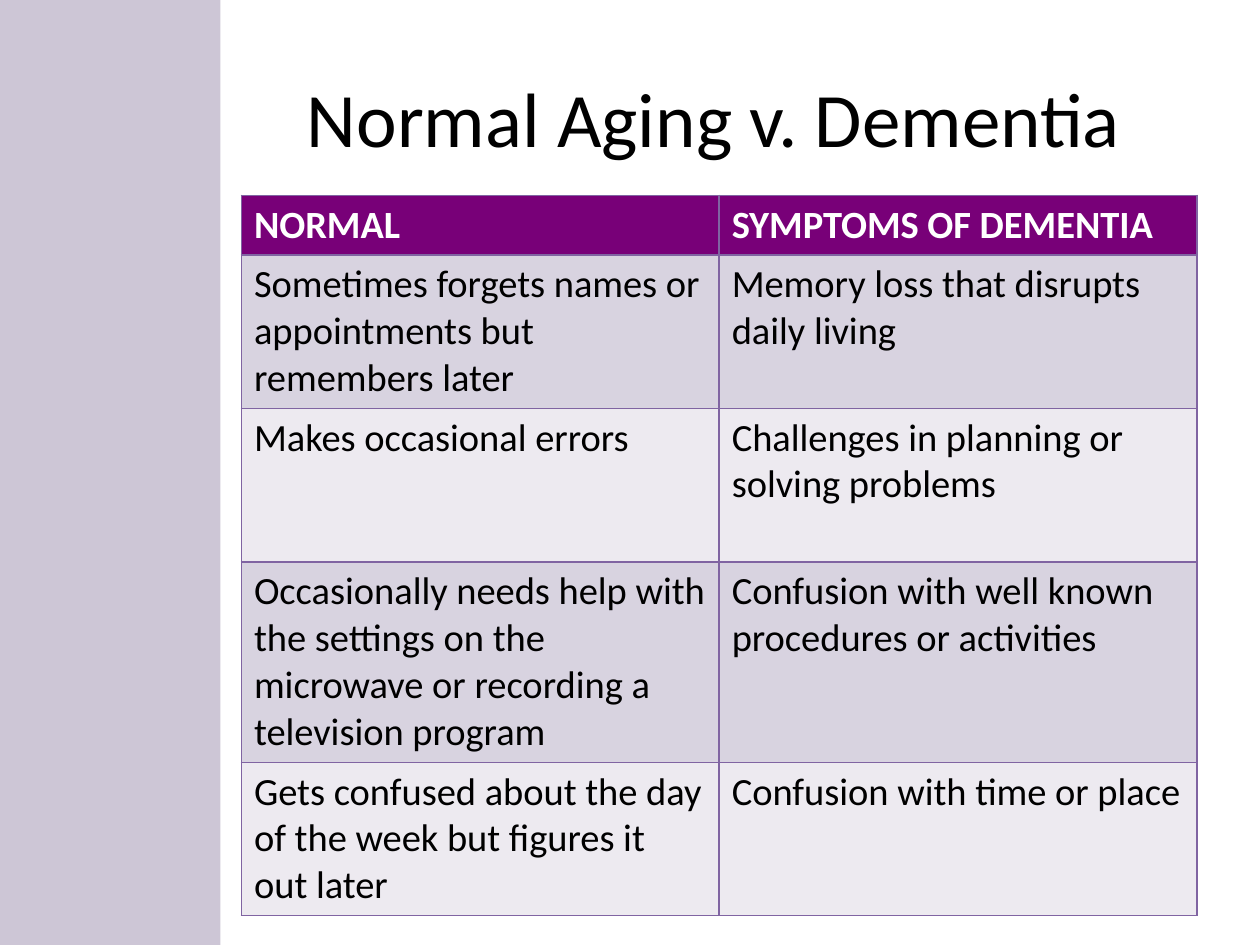
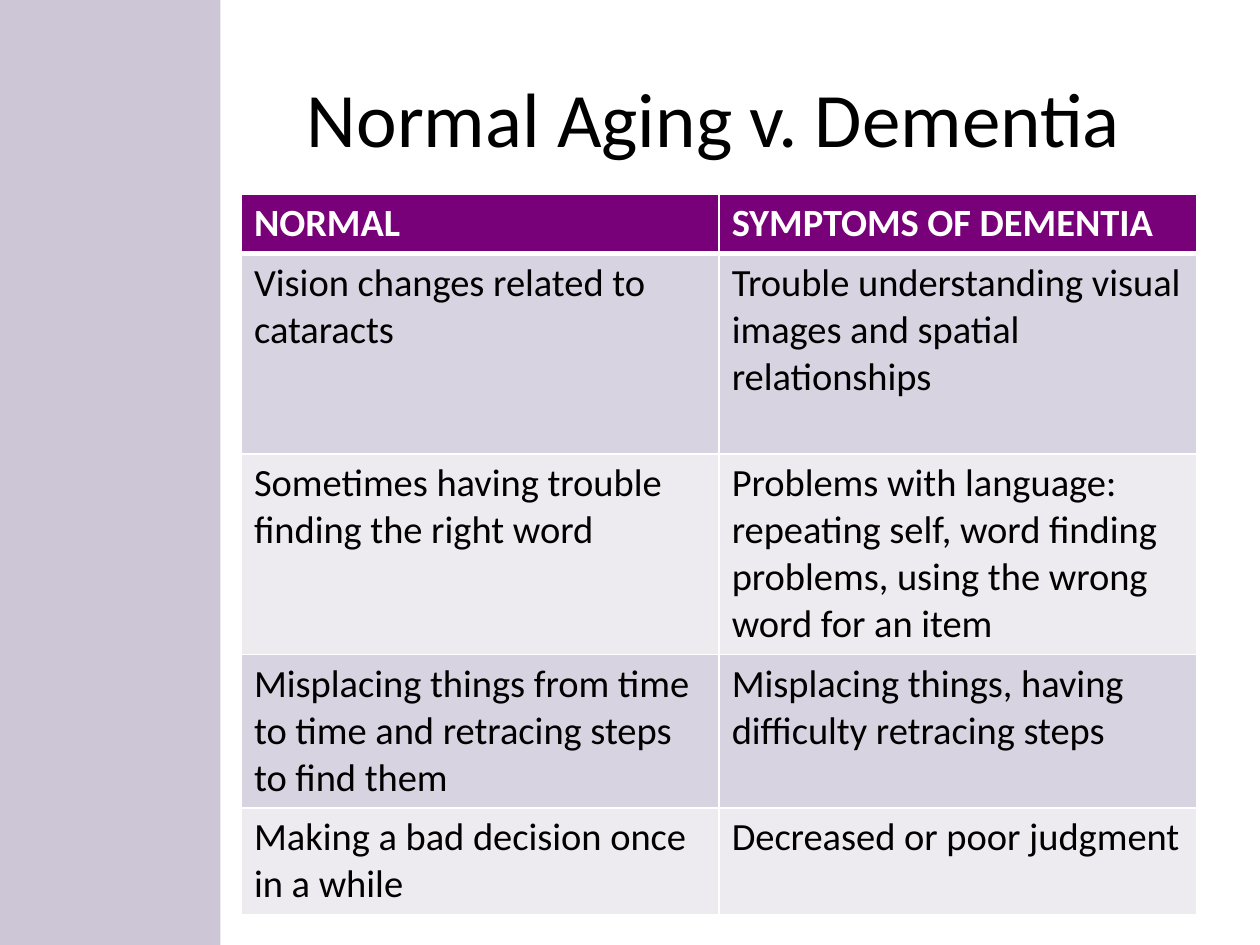
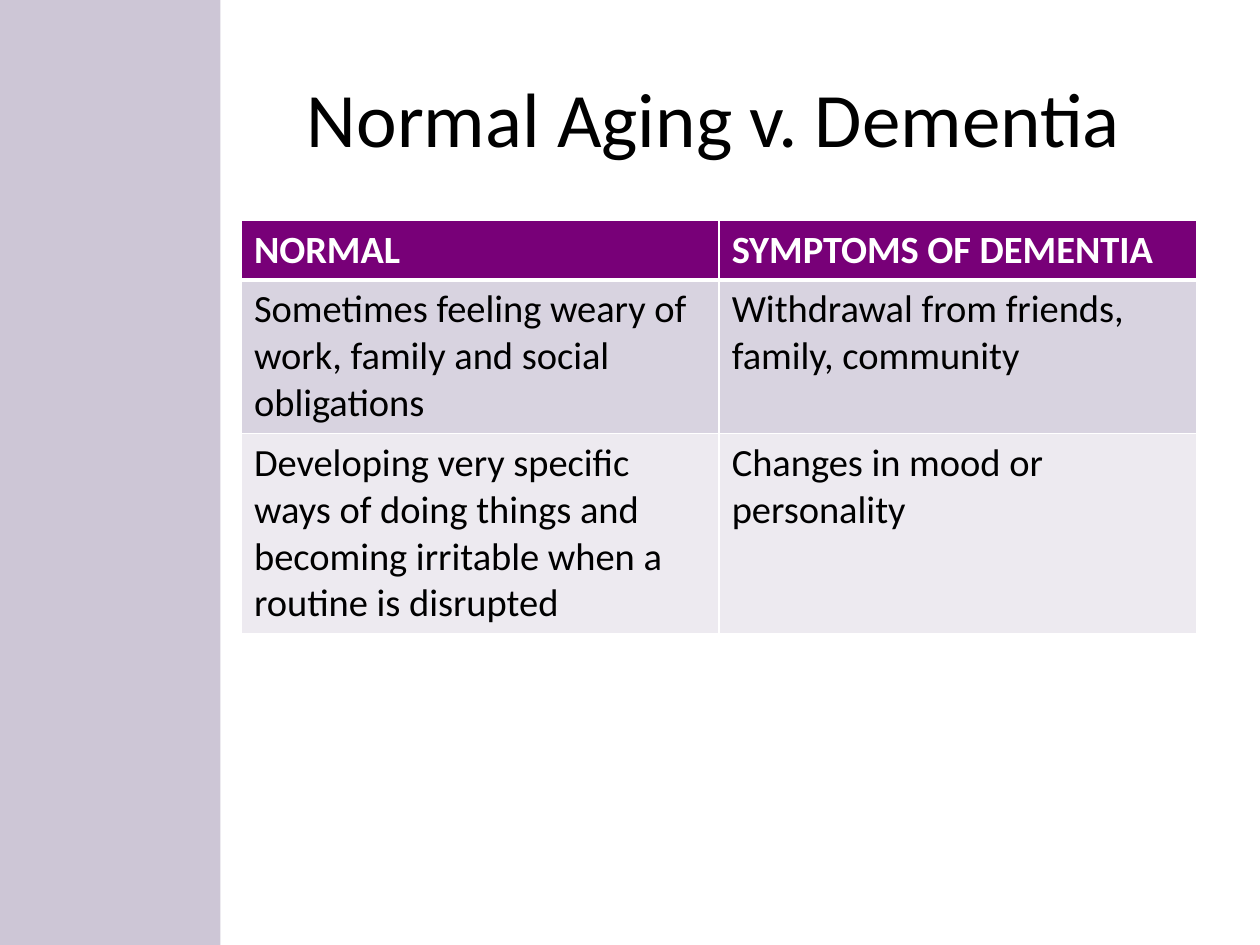
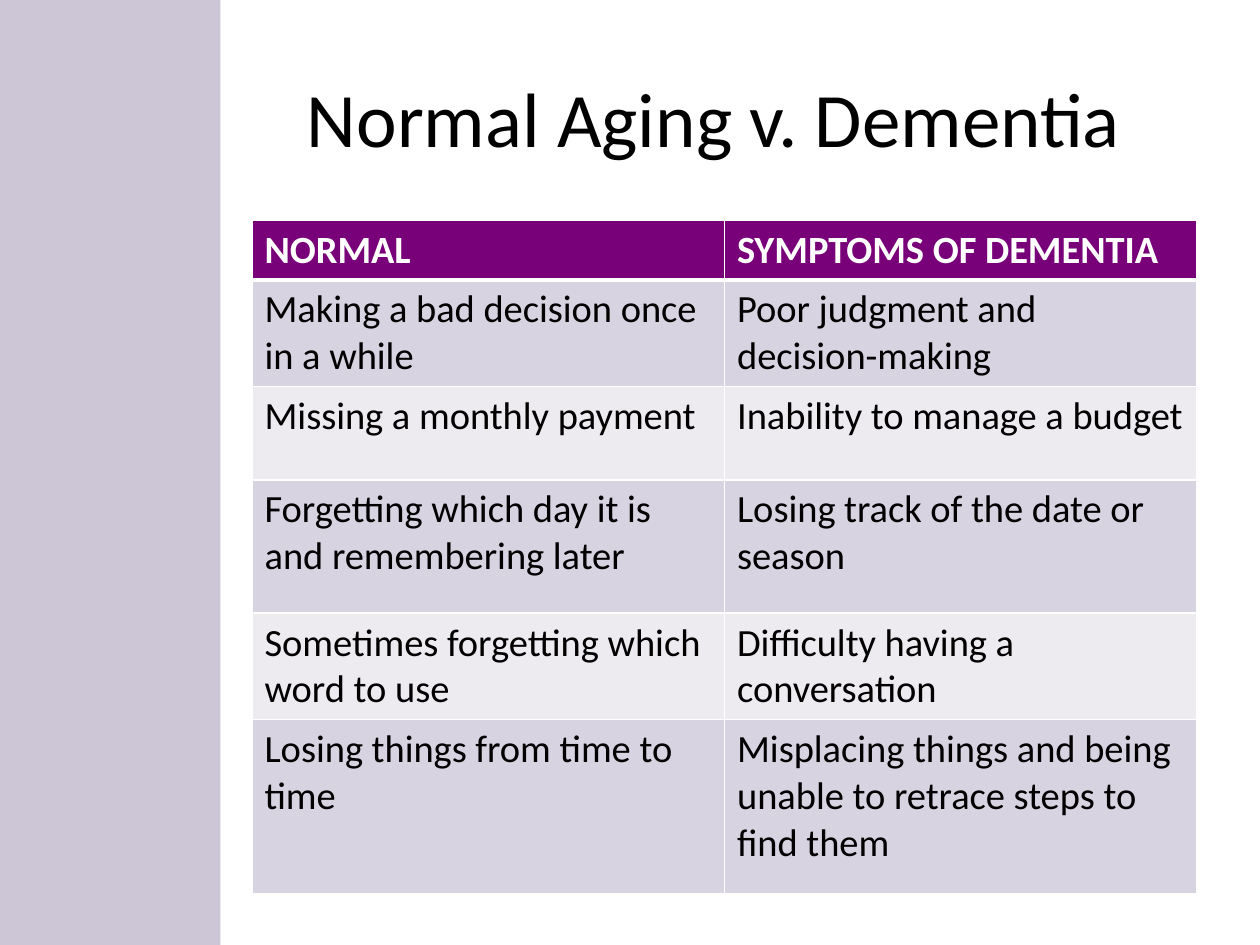
from dataclasses import dataclass

import pptx
import pptx.dml.color
import pptx.enum.shapes
import pptx.enum.text
import pptx.oxml
import pptx.oxml.ns
import pptx.util
from lxml import etree


@dataclass(frozen=True)
class Theme:
    """Colours, type sizes and line widths used by every slide."""
    font: str = "Calibri"
    title_size: int = 44
    table_size: int = 22
    line_spacing: float = 1.22
    ink: str = "000000"
    paper: str = "FFFFFF"
    side_band: str = "604A7B"
    side_band_opacity: int = 31
    header: str = "780078"
    row_fills: tuple = ("D8D3E0", "EDEAF0")
    purple_border: str = "8064A2"
    thin: int = 1
    thick: int = 3


@dataclass(frozen=True)
class Box:
    """A rectangle in inches."""
    left: float
    top: float
    width: float
    height: float

    def emu(self):
        """Return the four lengths in the units of the file."""
        return [pptx.util.Inches(side) for side in
                (self.left, self.top, self.width, self.height)]


THEME = Theme()
PAGE = Box(0, 0, 10, 7.5)
GRID = PAGE.width / 120
TABLE_LEFT = 23 * GRID
RIGHT_EDGE = 114 * GRID
SIDE_BAND = Box(0, 0, 21 * GRID, PAGE.height)
TITLE_BOX = Box(22 * GRID, 0.04 * PAGE.height, 92 * GRID, PAGE.height / 6)
LINE_HEIGHT = THEME.table_size * THEME.line_spacing / 72
CELL_PADDING = 0.1
TITLE = "Normal Aging v. Dementia"
HEADINGS = ("NORMAL", "SYMPTOMS OF DEMENTIA")

COMPARISONS = [
    dict(left=TABLE_LEFT, top=1.55, border=THEME.purple_border,
         header_rule=THEME.thin, rows=[
             (3, "Sometimes forgets names or appointments but remembers later",
              "Memory loss that disrupts daily living"),
             (3, "Makes occasional errors",
              "Challenges in planning or solving problems"),
             (4, "Occasionally needs help with the settings on the microwave "
                 "or recording a television program",
              "Confusion with well known procedures or activities"),
             (3, "Gets confused about the day of the week but figures it out "
                 "later",
              "Confusion with time or place"),
         ]),
    dict(left=TABLE_LEFT, top=1.54, rows=[
        (4, "Vision changes related to cataracts",
         "Trouble understanding visual images and spatial relationships"),
        (4, "Sometimes having trouble finding the right word",
         "Problems with language: repeating self, word finding problems, "
         "using the wrong word for an item"),
        (3, "Misplacing things from time to time and retracing steps to find "
            "them",
         "Misplacing things, having difficulty retracing steps"),
        (2, "Making a bad decision once in a while",
         "Decreased or poor judgment"),
    ]),
    dict(left=TABLE_LEFT, top=1.75, rows=[
        (3, "Sometimes feeling weary of work, family and social obligations",
         "Withdrawal from friends, family, community"),
        (4, "Developing very specific ways of doing things and becoming "
            "irritable when a routine is disrupted",
         "Changes in mood or personality"),
    ]),
    dict(left=TABLE_LEFT + GRID, top=1.75, rows=[
        (2, "Making a bad decision once in a while",
         "Poor judgment and decision-making"),
        (1.72, "Missing a monthly payment", "Inability to manage a budget"),
        (2.57, "Forgetting which day it is and remembering later",
         "Losing track of the date or season"),
        (2, "Sometimes forgetting which word to use",
         "Difficulty having a conversation"),
        (3.43, "Losing things from time to time",
         "Misplacing things and being unable to retrace steps to find them"),
    ]),
]


def colour(code):
    """Turn a hexadecimal code into a colour."""
    return pptx.dml.color.RGBColor.from_string(code)


def write(frame, text, *, size, ink=THEME.ink, bold=False,
          align=pptx.enum.text.PP_ALIGN.LEFT):
    """Put one formatted paragraph into a text frame."""
    para = frame.paragraphs[0]
    para.alignment = align
    span = para.add_run()
    span.text = text
    span.font.name = THEME.font
    span.font.size = pptx.util.Pt(size)
    span.font.bold = bold
    span.font.color.rgb = colour(ink)


def add_side_band(page, box):
    """Draw the translucent band along the left side."""
    band = page.shapes.add_shape(
        pptx.enum.shapes.MSO_SHAPE.RECTANGLE, *box.emu())
    band.shadow.inherit = False
    band.line.fill.background()
    band.fill.solid()
    band.fill.fore_color.rgb = colour(THEME.side_band)
    tint = band.element.spPr.find(".//" + pptx.oxml.ns.qn("a:srgbClr"))
    etree.SubElement(tint, pptx.oxml.ns.qn("a:alpha"),
                     val=str(THEME.side_band_opacity * 1000))


def add_title(page, box, text):
    """Place and format the title placeholder."""
    title = page.shapes.title
    title.left, title.top, title.width, title.height = box.emu()
    title.text_frame.vertical_anchor = pptx.enum.text.MSO_ANCHOR.MIDDLE
    write(title.text_frame, text, size=THEME.title_size,
          align=pptx.enum.text.PP_ALIGN.CENTER)


def set_borders(cell, code, top, bottom):
    """Draw the four borders of a cell ahead of its fill."""
    widths = dict(lnL=THEME.thin, lnR=THEME.thin, lnT=top, lnB=bottom)
    properties = cell._tc.get_or_add_tcPr()
    for index, (side, width) in enumerate(widths.items()):
        properties.insert(index, pptx.oxml.parse_xml(
            f'<a:{side} {pptx.oxml.ns.nsdecls("a")} '
            f'w="{pptx.util.Pt(width)}"><a:solidFill>'
            f'<a:srgbClr val="{code}"/></a:solidFill></a:{side}>'))


def add_comparison(page, left, top, rows, border=THEME.paper,
                   header_rule=THEME.thick):
    """Add a two-column table whose row heights follow their line counts."""
    lines = [1] + [row[0] for row in rows]
    texts = [HEADINGS] + [row[1:] for row in rows]
    heights = [CELL_PADDING + LINE_HEIGHT * count for count in lines]
    box = Box(left, top, RIGHT_EDGE - left, sum(heights))
    table = page.shapes.add_table(
        len(texts), len(HEADINGS), *box.emu()).table
    table.horz_banding = False
    for row_index, (height, entries) in enumerate(zip(heights, texts)):
        is_header = row_index == 0
        table.rows[row_index].height = pptx.util.Inches(height)
        fill = THEME.header if is_header else THEME.row_fills[
            (row_index - 1) % len(THEME.row_fills)]
        for column_index, text in enumerate(entries):
            cell = table.cell(row_index, column_index)
            cell.fill.solid()
            cell.fill.fore_color.rgb = colour(fill)
            set_borders(cell, border,
                        top=header_rule if row_index == 1 else THEME.thin,
                        bottom=header_rule if is_header else THEME.thin)
            write(cell.text_frame, text, size=THEME.table_size,
                  ink=THEME.paper if is_header else THEME.ink,
                  bold=is_header)


def main():
    """Build the four comparison slides and save the deck."""
    deck = pptx.Presentation()
    deck.slide_width = pptx.util.Inches(PAGE.width)
    deck.slide_height = pptx.util.Inches(PAGE.height)
    title_only = deck.slide_layouts.get_by_name("Title Only")
    for comparison in COMPARISONS:
        page = deck.slides.add_slide(title_only)
        add_side_band(page, SIDE_BAND)
        add_title(page, TITLE_BOX, TITLE)
        add_comparison(page, **comparison)
    deck.save("out.pptx")


if __name__ == "__main__":
    main()
